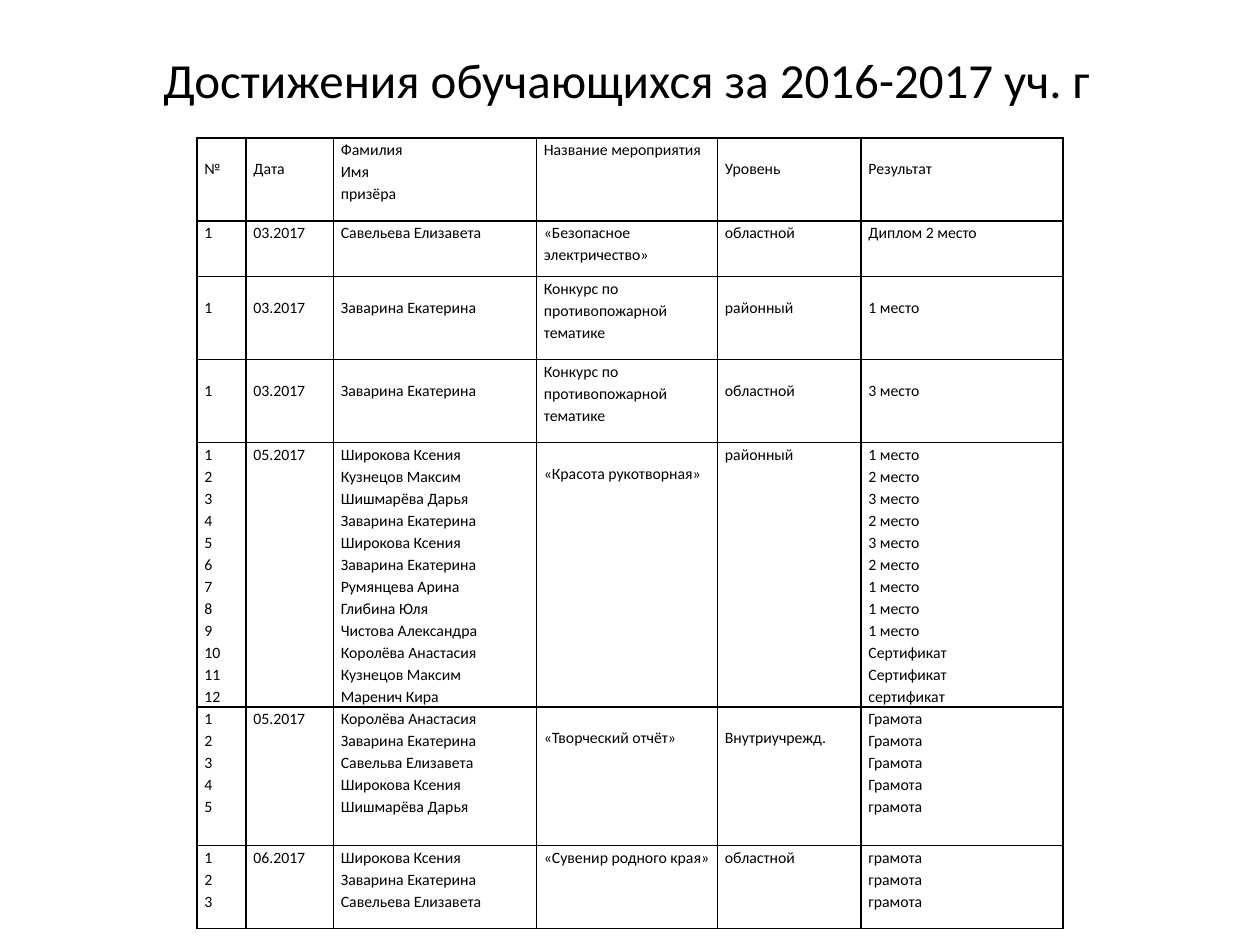
from lxml import etree
from pptx import Presentation
from pptx.dml.color import RGBColor
from pptx.enum.text import MSO_ANCHOR, PP_ALIGN
from pptx.oxml.ns import qn
from pptx.util import Pt

MIDDLE = MSO_ANCHOR.MIDDLE
TOP = MSO_ANCHOR.TOP
CENTER = PP_ALIGN.CENTER
LEFT = PP_ALIGN.LEFT

THEME = {"font": "Calibri", "ink": "000000", "title": 28, "body": 9, "border": 1}

TITLE = "Достижения обучающихся за 2016-2017 уч. г"
HEADER = (["№"], ["Дата"], ["Фамилия", "Имя", "призёра"],
          ["Название мероприятия"], ["Уровень"], ["Результат"])
AWARDS = [
    ("03.2017", "«Безопасное электричество»", "областной",
     [("Савельева Елизавета", "Диплом 2 место")]),
    ("03.2017", "Конкурс по противопожарной тематике", "районный",
     [("Заварина Екатерина", "1 место")]),
    ("03.2017", "Конкурс по противопожарной тематике", "областной",
     [("Заварина Екатерина", "3 место")]),
    ("05.2017", "«Красота рукотворная»", "районный",
     [("Широкова Ксения", "1 место"),
      ("Кузнецов Максим", "2 место"),
      ("Шишмарёва Дарья", "3 место"),
      ("Заварина Екатерина", "2 место"),
      ("Широкова Ксения", "3 место"),
      ("Заварина Екатерина", "2 место"),
      ("Румянцева Арина", "1 место"),
      ("Глибина Юля", "1 место"),
      ("Чистова Александра", "1 место"),
      ("Королёва Анастасия", "Сертификат"),
      ("Кузнецов Максим", "Сертификат"),
      ("Маренич Кира", "сертификат")]),
    ("05.2017", "«Творческий отчёт»", "Внутриучрежд.",
     [("Королёва Анастасия", "Грамота"),
      ("Заварина Екатерина", "Грамота"),
      ("Савельва Елизавета", "Грамота"),
      ("Широкова Ксения", "Грамота"),
      ("Шишмарёва Дарья", "грамота")]),
    ("06.2017", "«Сувенир родного края»", "областной",
     [("Широкова Ксения", "грамота"),
      ("Заварина Екатерина", "грамота"),
      ("Савельева Елизавета", "грамота")]),
]

COLUMN_WIDTHS = [28, 50, 116, 103.5, 82, 115.5]
ROW_HEIGHTS = [47.5, 31.75, 47.5, 47.5, 151, 79.25, 47.5]
LOWERED_COLUMNS = {0: {0, 1, 4, 5}, 2: {0, 1, 2, 4, 5}, 3: {0, 1, 2, 4, 5},
                   4: {3}, 5: {3, 4}}
LOWERED_BY = 11
TABLE_LEFT, TABLE_TOP = 112.5, 78.75


def award_row(date, event, level, winners):
    names, results = zip(*winners)
    numbers = [str(place) for place in range(1, len(winners) + 1)]
    return numbers, [date], names, [event], [level], results


def write(frame, lines, size, align, line_spacing):
    for index, line in enumerate(lines):
        paragraph = frame.paragraphs[0] if index == 0 else frame.add_paragraph()
        paragraph.alignment = align
        paragraph.line_spacing = line_spacing
        run = paragraph.add_run()
        run.text = line
        style = {"name": THEME["font"], "size": Pt(size), "bold": False}
        for key, value in style.items():
            setattr(run.font, key, value)
        run.font.color.rgb = RGBColor.from_string(THEME["ink"])


def outline(cell):
    properties = cell._tc.get_or_add_tcPr()
    for side in ("a:lnL", "a:lnR", "a:lnT", "a:lnB"):
        border = etree.SubElement(properties, qn(side), w=str(Pt(THEME["border"])))
        fill = etree.SubElement(border, qn("a:solidFill"))
        etree.SubElement(fill, qn("a:srgbClr"), val=THEME["ink"])


def add_title(slide):
    frame = slide.shapes.add_textbox(Pt(34), Pt(0), Pt(648), Pt(90)).text_frame
    frame.word_wrap = True
    frame.vertical_anchor = MIDDLE
    write(frame, [TITLE], THEME["title"], CENTER, 1)


def add_awards(slide):
    rows = [HEADER] + [award_row(*award) for award in AWARDS]
    table = slide.shapes.add_table(
        len(rows), len(HEADER), Pt(TABLE_LEFT), Pt(TABLE_TOP),
        Pt(sum(COLUMN_WIDTHS)), Pt(sum(ROW_HEIGHTS))).table
    table.first_row = False
    table.horz_banding = False
    for column, width in zip(table.columns, COLUMN_WIDTHS):
        column.width = Pt(width)
    for r, (row, height) in enumerate(zip(rows, ROW_HEIGHTS)):
        table.rows[r].height = Pt(height)
        for c, lines in enumerate(row):
            cell = table.cell(r, c)
            lowered = c in LOWERED_COLUMNS.get(r, ())
            layout = {"margin_left": Pt(4.32), "margin_right": Pt(4.32),
                      "margin_top": Pt(LOWERED_BY if lowered else 0),
                      "margin_bottom": Pt(0), "vertical_anchor": TOP}
            for key, value in layout.items():
                setattr(cell, key, value)
            outline(cell)
            cell.fill.background()
            write(cell.text_frame, lines, THEME["body"], LEFT, 1.15)


def main():
    deck = Presentation()
    deck.slide_width, deck.slide_height = Pt(720), Pt(540)
    slide = deck.slides.add_slide(deck.slide_layouts[6])
    add_title(slide)
    add_awards(slide)
    deck.save("out.pptx")


if __name__ == "__main__":
    main()
